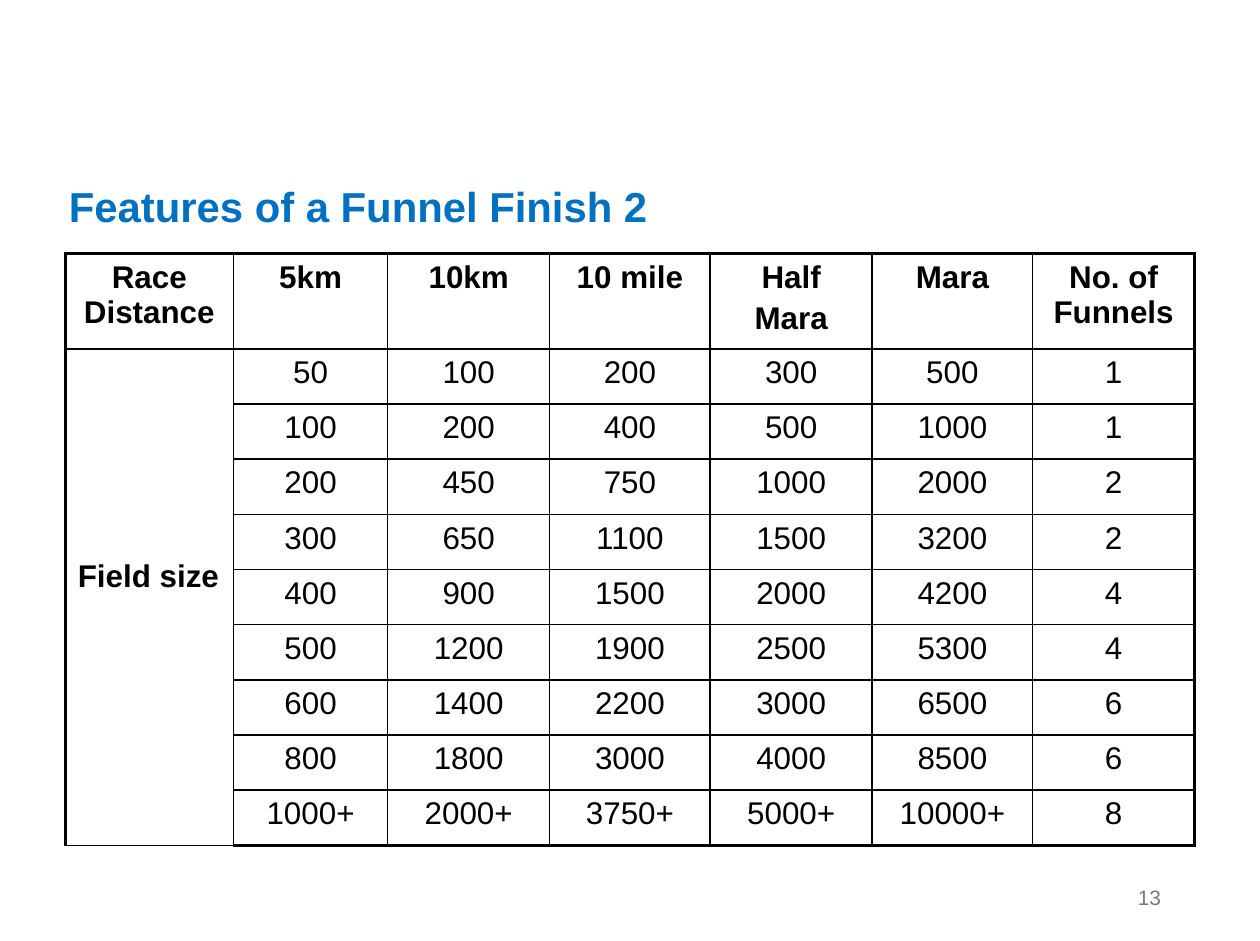
import pptx
import pptx.dml.color
import pptx.enum.text
import pptx.oxml
import pptx.oxml.ns
import pptx.util

Inches = pptx.util.Inches
Pt = pptx.util.Pt
ALIGN = pptx.enum.text.PP_ALIGN
ANCHOR = pptx.enum.text.MSO_ANCHOR

BLACK = pptx.dml.color.RGBColor(0x00, 0x00, 0x00)
BLUE = pptx.dml.color.RGBColor(0x00, 0x70, 0xC0)
GREY = pptx.dml.color.RGBColor(0x79, 0x79, 0x79)

THIN, THICK = 1, 2.25


def write_text(text_frame, text, alignment, color, **formats):
    text_frame.text = text
    for index, paragraph in enumerate(text_frame.paragraphs):
        paragraph.alignment = alignment
        if index:
            paragraph.space_before = Pt(3.6)
        paragraph.font.color.rgb = color
        for name, value in {"name": "Arial", **formats}.items():
            setattr(paragraph.font, name, value)


def add_border(cell, side, width):
    cell._tc.get_or_add_tcPr().append(pptx.oxml.parse_xml(
        f'<a:ln{side} {pptx.oxml.ns.nsdecls("a")} w="{Pt(width)}">'
        f'<a:solidFill><a:srgbClr val="{BLACK}"/></a:solidFill></a:ln{side}>'))


presentation = pptx.Presentation()
presentation.slide_width = Inches(10.04)
presentation.slide_height = Inches(7.5)
slide = presentation.slides.add_slide(presentation.slide_layouts[6])

# Title
title = slide.shapes.add_textbox(Inches(0.45), Inches(1.39), Inches(4.85), Inches(0.5))
title.text_frame.word_wrap = False
write_text(title.text_frame, "Features of a Funnel Finish 2", ALIGN.LEFT, BLUE,
           size=Pt(24), bold=True)

# Funnel table
rows = [
    ["Race Distance", "5km", "10km", "10 mile", "Half\nMara", "Mara", "No. of Funnels"],
    ["Field size", "50", "100", "200", "300", "500", "1"],
    ["", "100", "200", "400", "500", "1000", "1"],
    ["", "200", "450", "750", "1000", "2000", "2"],
    ["", "300", "650", "1100", "1500", "3200", "2"],
    ["", "400", "900", "1500", "2000", "4200", "4"],
    ["", "500", "1200", "1900", "2500", "5300", "4"],
    ["", "600", "1400", "2200", "3000", "6500", "6"],
    ["", "800", "1800", "3000", "4000", "8500", "6"],
    ["", "1000+", "2000+", "3750+", "5000+", "10000+", "8"],
]
column_widths = [1.34, 1.23, 1.29, 1.28, 1.29, 1.28, 1.29]
last_row, last_column = len(rows) - 1, len(column_widths) - 1

table = slide.shapes.add_table(len(rows), len(column_widths), Inches(0.52), Inches(2.02),
                               Inches(9), Inches(4.76)).table
table.first_row = False
table.horz_banding = False
for column, width in zip(table.columns, column_widths):
    column.width = Inches(width)
for index, row in enumerate(table.rows):
    row.height = Inches(0.44 if index else 0.76)

for r, values in enumerate(rows):
    for c, value in enumerate(values):
        cell = table.cell(r, c)
        # Thick lines on the outer edge, thin ones inside
        for side, outer in {"L": c == 0, "R": c == last_column,
                            "T": r == 0, "B": r == last_row}.items():
            add_border(cell, side, THICK if outer else THIN)
        cell.fill.background()
        write_text(cell.text_frame, value, ALIGN.CENTER, BLACK,
                   size=Pt(18), bold=r == 0 or c == 0)

# Field size label spans all data rows and sits a little above the middle
field_size = table.cell(1, 0)
field_size.merge(table.cell(last_row, 0))
field_size.vertical_anchor = ANCHOR.MIDDLE
field_size.margin_bottom = Inches(0.37)
field_size.text_frame.paragraphs[0].alignment = ALIGN.LEFT

# Slide number
number = slide.shapes.add_textbox(Inches(7.09), Inches(6.95), Inches(2.26), Inches(0.4))
number.text_frame.word_wrap = True
number.text_frame.vertical_anchor = ANCHOR.MIDDLE
write_text(number.text_frame, "13", ALIGN.RIGHT, GREY, size=Pt(12))

presentation.save("out.pptx")
